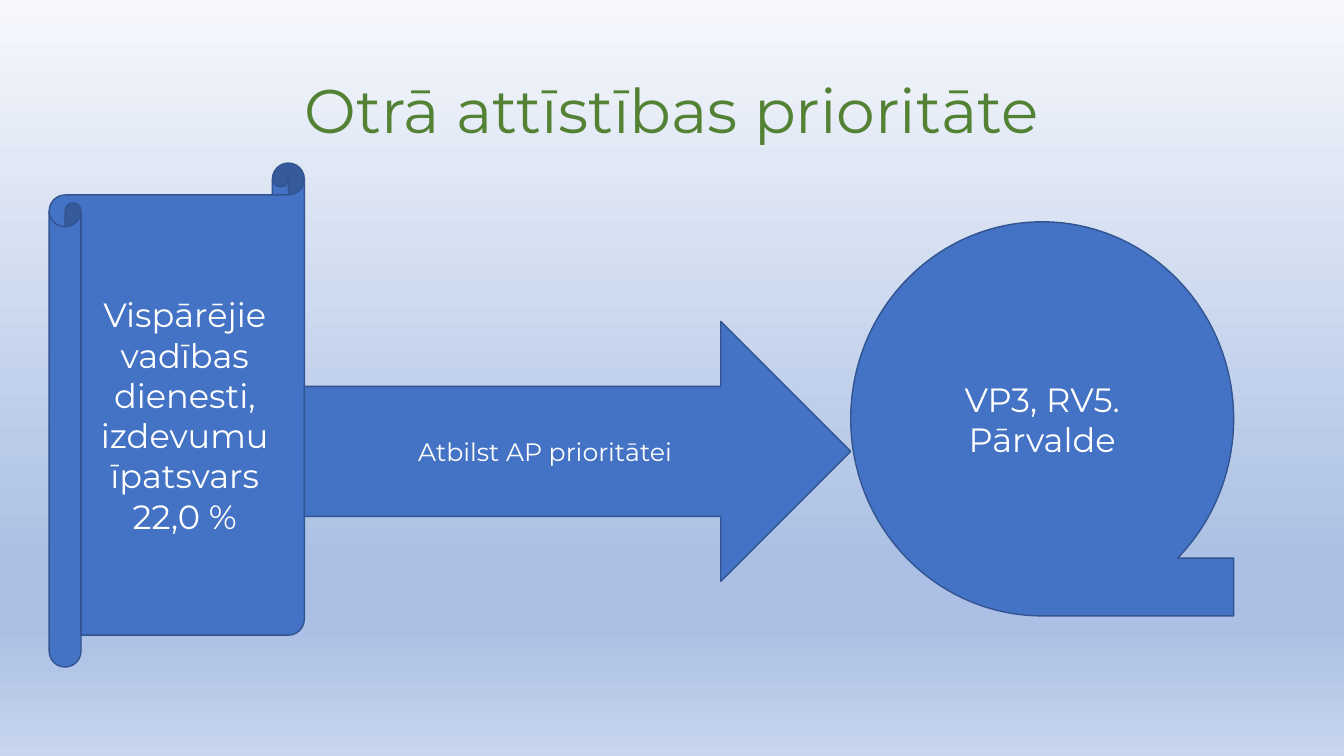
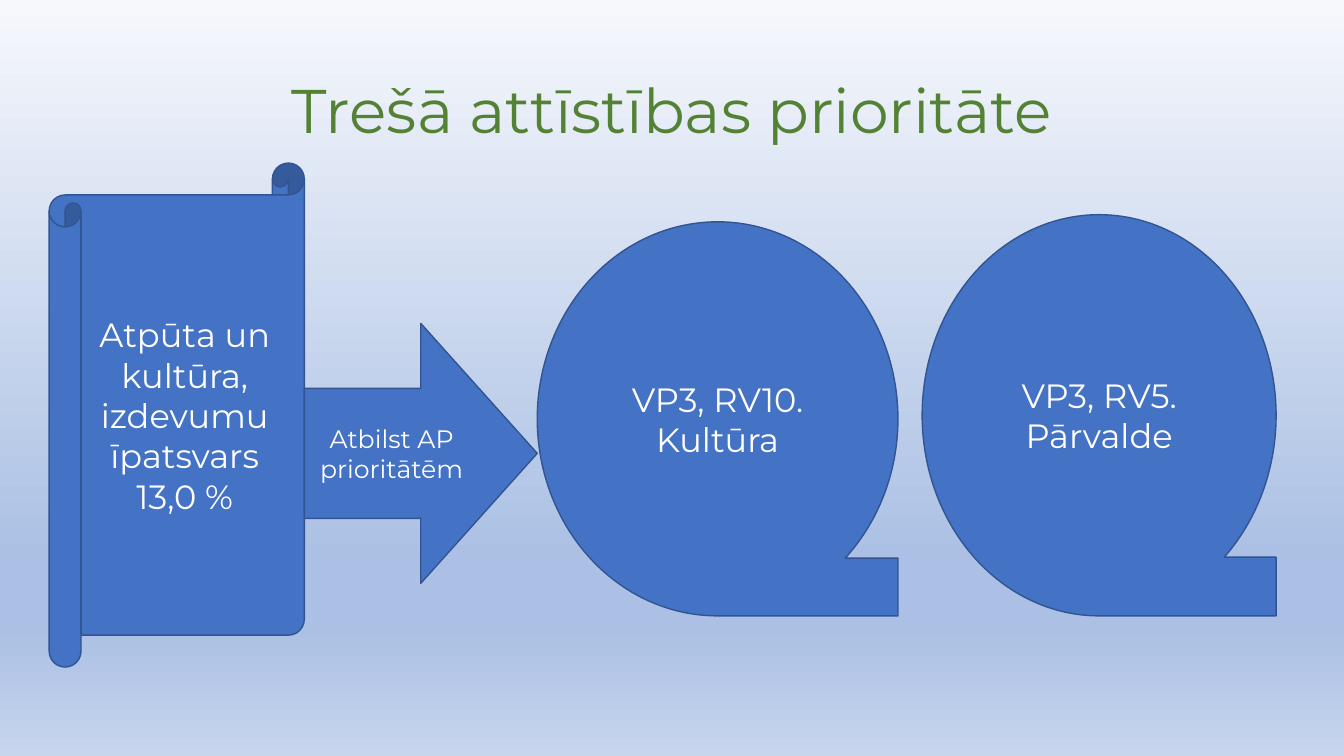
from lxml import etree
from pptx import Presentation
from pptx.dml.color import RGBColor
from pptx.enum.shapes import MSO_SHAPE as SHAPE
from pptx.enum.text import MSO_ANCHOR as ANCHOR, PP_ALIGN as ALIGN
from pptx.oxml.ns import qn
from pptx.util import Cm, Pt

GREEN = RGBColor(0x54, 0x82, 0x35)
BLUE = RGBColor(0x44, 0x72, 0xC4)
NAVY = RGBColor(0x32, 0x54, 0x91)
WHITE = RGBColor(0xFF, 0xFF, 0xFF)
PALE = RGBColor(0xF6, 0xF8, 0xFC)
MIST = RGBColor(0xAB, 0xC0, 0xE4)
SKY = RGBColor(0xC7, 0xD5, 0xED)
BACKDROP = [(0, PALE), (74, MIST), (83, MIST), (100, SKY)]

SCROLL_LEFT, SCROLL_WIDTH = 1.24, 6.43
SCROLL_RIGHT = SCROLL_LEFT + SCROLL_WIDTH
ARROW_HEIGHT = 6.55
TAPE_BOTTOM = 15.52


class Deck:
    font = "Montserrat"

    def __init__(self):
        self.prs = Presentation()
        self.prs.slide_width, self.prs.slide_height = Cm(33.87), Cm(19.05)
        self.s = None
        self.backdrop()

    def backdrop(self):
        master = self.prs.slide_master
        fill = master.background.fill
        fill.gradient()
        fill.gradient_angle = 270
        stops = next(master.element.iter(qn("a:gsLst")))
        for stop in list(stops):
            stops.remove(stop)
        for percent, color in BACKDROP:
            stop = etree.SubElement(stops, qn("a:gs"), pos=str(percent * 1000))
            etree.SubElement(stop, qn("a:srgbClr"), val=str(color))

    def slide(self, title):
        self.s = self.prs.slides.add_slide(self.prs.slide_layouts[6])
        sp = self.s.shapes.add_textbox(Cm(2.33), Cm(1.02), Cm(29.21), Cm(3.68))
        self.text(sp, title, 44, GREEN).line_spacing = 0.9

    def text(self, sp, text, size, color):
        tf = sp.text_frame
        tf.word_wrap = True
        tf.vertical_anchor = ANCHOR.MIDDLE
        p = tf.paragraphs[0]
        p.text = text
        p.alignment = ALIGN.CENTER
        p.font.name = self.font
        p.font.size = Pt(size)
        p.font.color.rgb = color
        return p

    def shape(self, kind, left, top, width, height, text, size=24):
        sp = self.s.shapes.add_shape(kind, Cm(left), Cm(top), Cm(width), Cm(height))
        sp.shadow.inherit = False
        sp.fill.solid()
        sp.fill.fore_color.rgb = BLUE
        sp.line.color.rgb = NAVY
        sp.line.width = Pt(1)
        self.text(sp, text, size, WHITE)

    def scroll(self, text):
        self.shape(SHAPE.HORIZONTAL_SCROLL, SCROLL_LEFT, 4.11, SCROLL_WIDTH, 12.7, text)

    def arrow(self, top, right, text):
        self.shape(SHAPE.RIGHT_ARROW, SCROLL_RIGHT, top, right - SCROLL_RIGHT,
                   ARROW_HEIGHT, text, 18)

    def tape(self, left, top, width, text):
        self.shape(SHAPE.FLOWCHART_SEQUENTIAL_ACCESS_STORAGE, left, top, width,
                   TAPE_BOTTOM - top, text)


def main():
    deck = Deck()

    deck.slide("Otrā attīstības prioritāte")
    deck.scroll("Vispārējie vadības dienesti, izdevumu īpatsvars 22,0 %")
    deck.arrow(8.1, 21.44, "Atbilst AP prioritātei")
    deck.tape(21.44, 5.59, 9.65, "VP3, RV5. Pārvalde")

    deck.slide("Trešā attīstības prioritāte")
    deck.scroll("Atpūta un kultūra, izdevumu īpatsvars 13,0 %")
    deck.arrow(8.15, 13.54, "Atbilst AP prioritātēm")
    deck.tape(13.54, 5.59, 9.09, "VP3, RV10. Kultūra")
    deck.tape(23.24, 5.41, 8.92, "VP3, RV5. Pārvalde")

    deck.prs.save("out.pptx")


if __name__ == "__main__":
    main()
